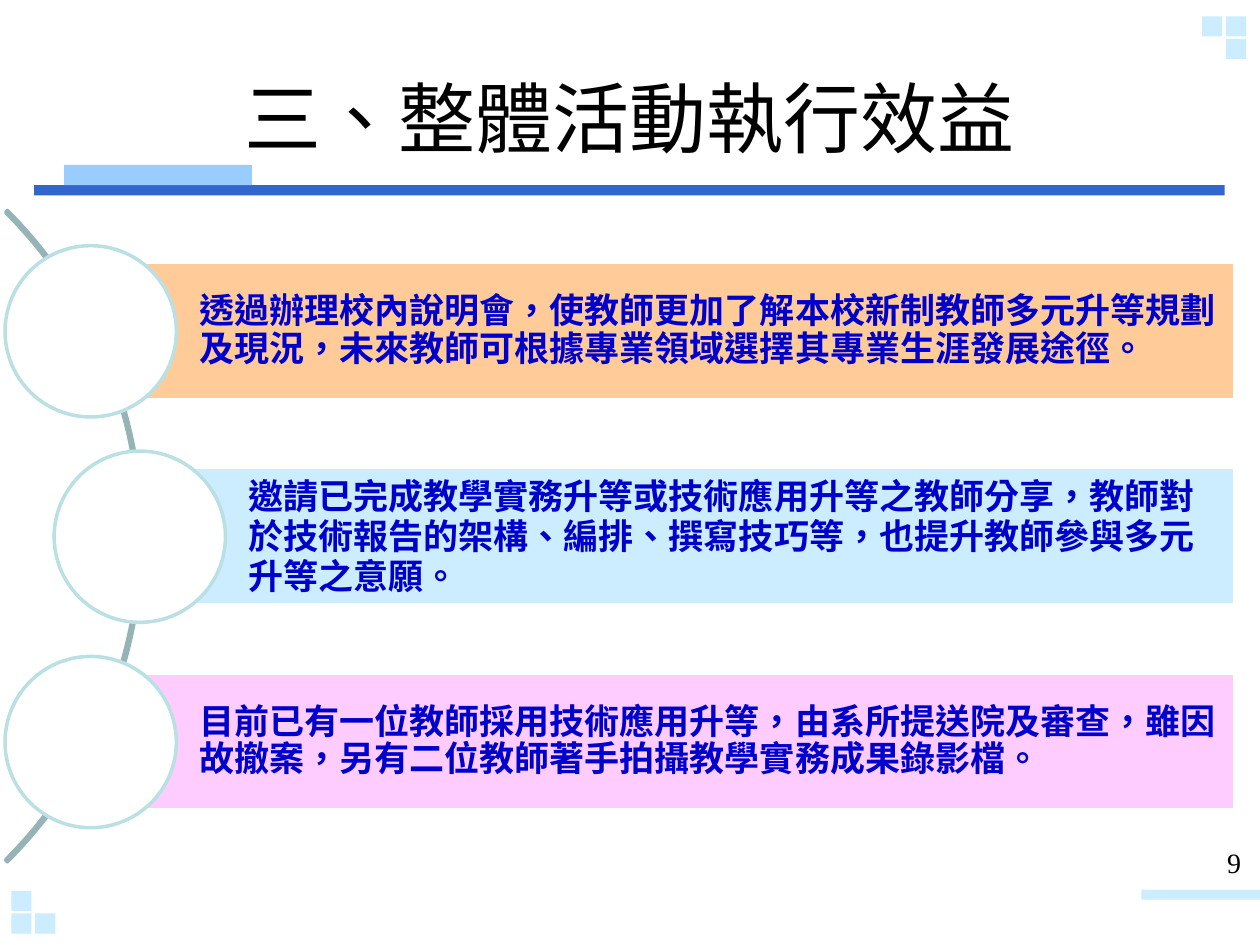
from lxml.etree import SubElement
from pptx import Presentation
from pptx.dml.color import RGBColor
from pptx.enum.shapes import MSO_SHAPE as Shape
from pptx.enum.text import MSO_ANCHOR as Anchor, PP_ALIGN as Align
from pptx.oxml.ns import qn
from pptx.util import Pt

EMU_PER_PX = 9144
SLIDE_WIDTH, SLIDE_HEIGHT = 1000, 750

WHITE = RGBColor(0xFF, 0xFF, 0xFF)
BLACK = RGBColor(0x00, 0x00, 0x00)
RULE_BLUE = RGBColor(0x33, 0x66, 0xCC)
TAB_BLUE = RGBColor(0x99, 0xCC, 0xFF)
PALE_BLUE = RGBColor(0xCC, 0xEC, 0xFF)
ORANGE = RGBColor(0xFF, 0xCC, 0x99)
PINK = RGBColor(0xFF, 0xCC, 0xFF)
TEXT_BLUE = RGBColor(0x00, 0x00, 0xCC)
ARC_GRAY = RGBColor(0x96, 0xB3, 0xB6)
RING_TEAL = RGBColor(0xBB, 0xE0, 0xE3)

CJK_FONT, NUMBER_FONT = "Noto Sans CJK SC", "Times New Roman"

TITLE = "三、整體活動執行效益"
PAGE_NUMBER = "9"
BENEFITS = [
    ("透過辦理校內說明會，使教師更加了解本校新制教師多元升等規劃及現況，"
     "未來教師可根據專業領域選擇其專業生涯發展途徑。", ORANGE, 0, 0.9),
    ("邀請已完成教學實務升等或技術應用升等之教師分享，教師對於技術報告的架構、"
     "編排、撰寫技巧等，也提升教師參與多元升等之意願。", PALE_BLUE, 39, Pt(23)),
    ("目前已有一位教師採用技術應用升等，由系所提送院及審查，雖因故撤案，"
     "另有二位教師著手拍攝教學實務成果錄影檔。", PINK, 0, 0.9),
]


def px(*lengths):
    """Turn px lengths into EMU."""
    return [length * EMU_PER_PX for length in lengths]


def assign(target, formats):
    """Set every attribute in the dict on the target."""
    for name, setting in formats.items():
        setattr(target, name, setting)


def add_block(slide, kind, box, fill=None, line=None):
    """Add a flat preset shape with an optional fill and 2 pt outline."""
    block = slide.shapes.add_shape(kind, *px(*box))
    block.shadow.inherit = False
    if fill is None:
        block.fill.background()
    else:
        block.fill.solid()
        block.fill.fore_color.rgb = fill
    if line is None:
        block.line.fill.background()
    else:
        block.line.color.rgb = line
        block.line.width = Pt(2)
    return block


def write(frame, text, color, font, frame_formats, paragraph_formats):
    """Write one formatted paragraph into a text frame."""
    assign(frame, frame_formats)
    paragraph = frame.paragraphs[0]
    assign(paragraph, paragraph_formats)
    run = paragraph.add_run()
    run.text = text
    assign(run.font, font)
    run.font.color.rgb = color
    properties = run.font._element
    properties.set("lang", "zh-TW")
    SubElement(properties, qn("a:ea")).set("typeface", font["name"])


def margins(left, top, right, bottom):
    """Name four px insets as text frame margins."""
    sides = ("margin_left", "margin_top", "margin_right", "margin_bottom")
    return dict(zip(sides, px(left, top, right, bottom)))


def add_squares(slide, left, top, cells):
    """Place small corner squares on a column and row grid."""
    for column, row in cells:
        add_block(slide, Shape.RECTANGLE,
                  (left + 19 * column, top + 18 * row, 16, 16), PALE_BLUE)


def add_decoration(slide):
    """Draw the rules and the squares in two corners."""
    add_block(slide, Shape.RECTANGLE, (27, 147, 945, 8), RULE_BLUE)
    add_block(slide, Shape.RECTANGLE, (51, 131, 149, 16), TAB_BLUE)
    add_block(slide, Shape.RECTANGLE, (906, 706, 94, 8), PALE_BLUE)
    add_squares(slide, 954, 13, [(0, 0), (1, 0), (1, 1)])
    add_squares(slide, 9, 707, [(0, 0), (0, 1), (1, 1)])


def add_title(slide, left, top, width, height):
    """Move and fill the title placeholder."""
    title = slide.shapes.title
    places = px(left, top, width, height)
    assign(title, dict(zip(("left", "top", "width", "height"), places)))
    write(title.text_frame, TITLE, BLACK,
          {"name": CJK_FONT, "size": Pt(44)},
          {"vertical_anchor": Anchor.MIDDLE, "word_wrap": True},
          {"alignment": Align.CENTER})


def add_page_number(slide, left, top, width, height):
    """Write the page number."""
    number = slide.shapes.add_textbox(*px(left, top, width, height))
    write(number.text_frame, PAGE_NUMBER, BLACK,
          {"name": NUMBER_FONT, "size": Pt(16)},
          {"word_wrap": True, **margins(4, 5, 4, 5)},
          {"alignment": Align.RIGHT})


def add_benefit(slide, left, top, right, benefit):
    """Draw one benefit bar with the circle over its left end."""
    text, fill, indent, spacing = benefit
    diameter, bar_height = 136, 109
    bar_left = left + indent + diameter // 2
    bar_top = top + (diameter - bar_height) // 2
    bar = add_block(slide, Shape.RECTANGLE,
                    (bar_left, bar_top, right - bar_left, bar_height), fill, WHITE)
    write(bar.text_frame, text, TEXT_BLUE,
          {"name": CJK_FONT, "size": Pt(20), "bold": True},
          {"vertical_anchor": Anchor.MIDDLE, "word_wrap": True,
           **margins(86, 6, 6, 6)},
          {"alignment": Align.LEFT, "line_spacing": spacing, "space_after": Pt(7)})
    add_block(slide, Shape.OVAL, (left + indent, top, diameter, diameter),
              WHITE, RING_TEAL)


def add_benefits(slide, left, top, right, pitch):
    """Draw the arc and the evenly spaced benefits along it."""
    arc = add_block(slide, Shape.BLOCK_ARC,
                    (left - 622, top - 135, 731, 731), line=ARC_GRAY)
    for index, adjustment in enumerate((189, 27, 0.003)):
        arc.adjustments[index] = adjustment
    for index, benefit in enumerate(BENEFITS):
        add_benefit(slide, left, top + pitch * index, right, benefit)


def main():
    """Build and save the slide."""
    deck = Presentation()
    deck.slide_width, deck.slide_height = px(SLIDE_WIDTH, SLIDE_HEIGHT)
    slide = deck.slides.add_slide(deck.slide_layouts[5])
    add_decoration(slide)
    add_title(slide, 50, 30, 900, 125)
    add_page_number(slide, 965, 666, 24, 39)
    add_benefits(slide, 4, 195, 980, 163)
    deck.save("out.pptx")


if __name__ == "__main__":
    main()
